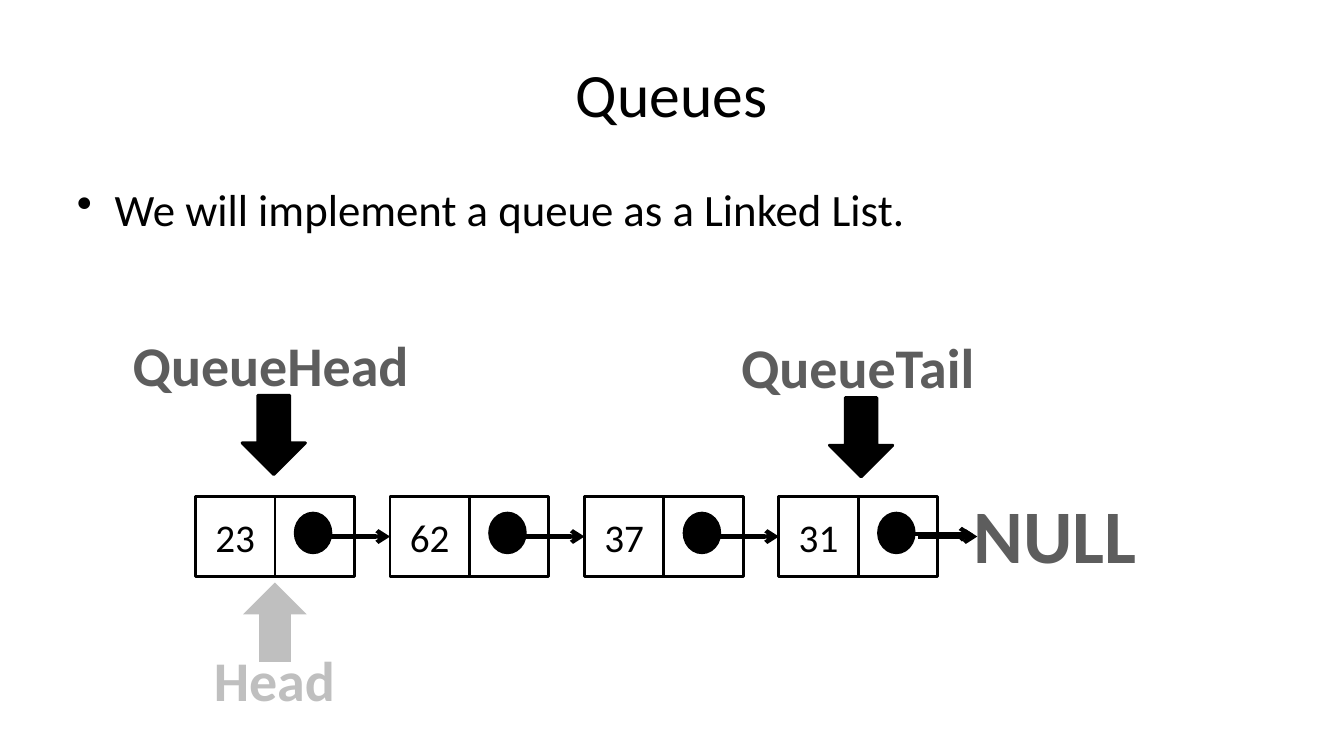
import dataclasses

import lxml.etree
import pptx
import pptx.dml.color
import pptx.enum.shapes
import pptx.enum.text
import pptx.oxml.ns
import pptx.util

Cm = pptx.util.Cm
Pt = pptx.util.Pt
Shape = pptx.enum.shapes.MSO_SHAPE
Anchor = pptx.enum.text.MSO_ANCHOR
Align = pptx.enum.text.PP_ALIGN
qn = pptx.oxml.ns.qn


@dataclasses.dataclass(frozen=True)
class Theme:
    font: str = "Calibri"
    ink: str = "000000"
    label: str = "5D5D5D"
    faded: str = "BFBFBF"
    title_size: int = 44
    body_size: int = 32
    value_size: int = 28
    label_size: int = 40
    null_size: int = 54
    outline: int = 2
    link: int = 3


THEME = Theme()
CELL = 2.0
NODE_PITCH = 4.9


def rgb(color):
    return pptx.dml.color.RGBColor.from_string(color)


def write(shape, text, size, color=THEME.ink, bold=False, align=Align.CENTER):
    paragraph = shape.text_frame.paragraphs[0]
    paragraph.text = text
    paragraph.alignment = align
    font = paragraph.font
    font.name, font.size, font.bold = THEME.font, Pt(size), bold
    font.color.rgb = rgb(color)
    return paragraph


def add_text_box(slide, box, anchor=Anchor.TOP, wrap=True):
    shape = slide.shapes.add_textbox(*map(Cm, box))
    shape.text_frame.word_wrap = wrap
    shape.text_frame.vertical_anchor = anchor
    return shape


def add_figure(slide, kind, box, fill=None, line=THEME.ink):
    shape = slide.shapes.add_shape(kind, *map(Cm, box))
    shape.shadow.inherit = False
    if fill:
        shape.fill.solid()
        shape.fill.fore_color.rgb = rgb(fill)
    else:
        shape.fill.background()
    if line:
        shape.line.color.rgb = rgb(line)
        shape.line.width = Pt(THEME.outline)
    else:
        shape.line.fill.background()
    return shape


def add_link(slide, left, right, y):
    connector = slide.shapes.add_connector(
        pptx.enum.shapes.MSO_CONNECTOR.STRAIGHT, Cm(left), Cm(y), Cm(right), Cm(y))
    connector.line.color.rgb = rgb(THEME.ink)
    connector.line.width = Pt(THEME.link)
    line = connector.line._get_or_add_ln()
    lxml.etree.SubElement(line, qn("a:tailEnd"), type="arrow")
    lxml.etree.SubElement(connector._element.spPr, qn("a:effectLst"))
    return connector


def add_title(slide, box):
    write(add_text_box(slide, box, Anchor.MIDDLE), "Queues", THEME.title_size)


def add_body(slide, box):
    paragraph = write(add_text_box(slide, box),
                      "We will implement a queue as a Linked List.",
                      THEME.body_size, align=Align.LEFT)
    # Hanging bullet
    properties = paragraph._p.get_or_add_pPr()
    properties.set("marL", str(Cm(0.95)))
    properties.set("indent", str(-Cm(0.95)))
    bullet = lxml.etree.Element(qn("a:buChar"), char="•")
    properties.insert(0, bullet)


def add_label(slide, box, text, size=THEME.label_size, color=THEME.label):
    write(add_text_box(slide, box, wrap=False), text, size, color, bold=True)


def add_node(slide, left, top, value):
    """Draw a value cell, a dot and a pointer cell; return the value cell."""
    cell = add_figure(slide, Shape.RECTANGLE, (left, top, CELL, CELL))
    cell.text_frame.vertical_anchor = Anchor.MIDDLE
    write(cell, value, THEME.value_size)
    add_figure(slide, Shape.OVAL, (left + 2.51, top + 0.41, 0.9, 1), THEME.ink)
    add_figure(slide, Shape.RECTANGLE, (left + CELL, top, CELL, CELL))
    return cell


def add_linked_list(slide, left, top, values):
    middle = top + CELL / 2
    lefts = [left + index * NODE_PITCH for index in range(len(values))]
    cells = [add_node(slide, x, top, value) for x, value in zip(lefts, values)]

    # Each dot points to the next node
    for x, following in zip(lefts, cells[1:]):
        link = add_link(slide, x + 3.41, x + NODE_PITCH, middle)
        link.end_connect(following, 1)

    # The last node points to NULL with a doubled arrow
    for shift, y in ((0, middle - 0.06), (0.1, middle)):
        add_link(slide, lefts[-1] + 3.41 + shift, lefts[-1] + NODE_PITCH + shift, y)
    add_label(slide, (lefts[-1] + 4.62, top - 0.35, 4.67, 2.56), "NULL", THEME.null_size)


def add_top_marker(slide, box, text, arrow_left):
    left, top, width, height = box
    add_label(slide, box, text)
    add_figure(slide, Shape.DOWN_ARROW, (left + arrow_left, top + 1.76, 1.6, 2), THEME.ink)


def add_bottom_marker(slide, box, text):
    left, top, width, height = box
    add_label(slide, box, text, color=THEME.faded)
    add_figure(slide, Shape.UP_ARROW, (left + 1.02, top - 1.47, 1.6, 2), THEME.faded, None)


def main():
    presentation = pptx.Presentation()
    presentation.slide_width, presentation.slide_height = Cm(33.87), Cm(19.05)
    slide = presentation.slides.add_slide(presentation.slide_layouts[6])

    add_title(slide, (1.69, 0.76, 30.48, 3.18))
    add_body(slide, (1.69, 4.45, 30.48, 12.57))
    add_linked_list(slide, 4.93, 12.52, ("23", "62", "37", "31"))
    add_top_marker(slide, (3.05, 8.2, 7.54, 1.96), "QueueHead", 3.05)
    add_top_marker(slide, (18.39, 8.26, 6.45, 1.96), "QueueTail", 2.51)
    add_bottom_marker(slide, (5.11, 16.15, 3.61, 1.96), "Head")

    presentation.save("out.pptx")


if __name__ == "__main__":
    main()
